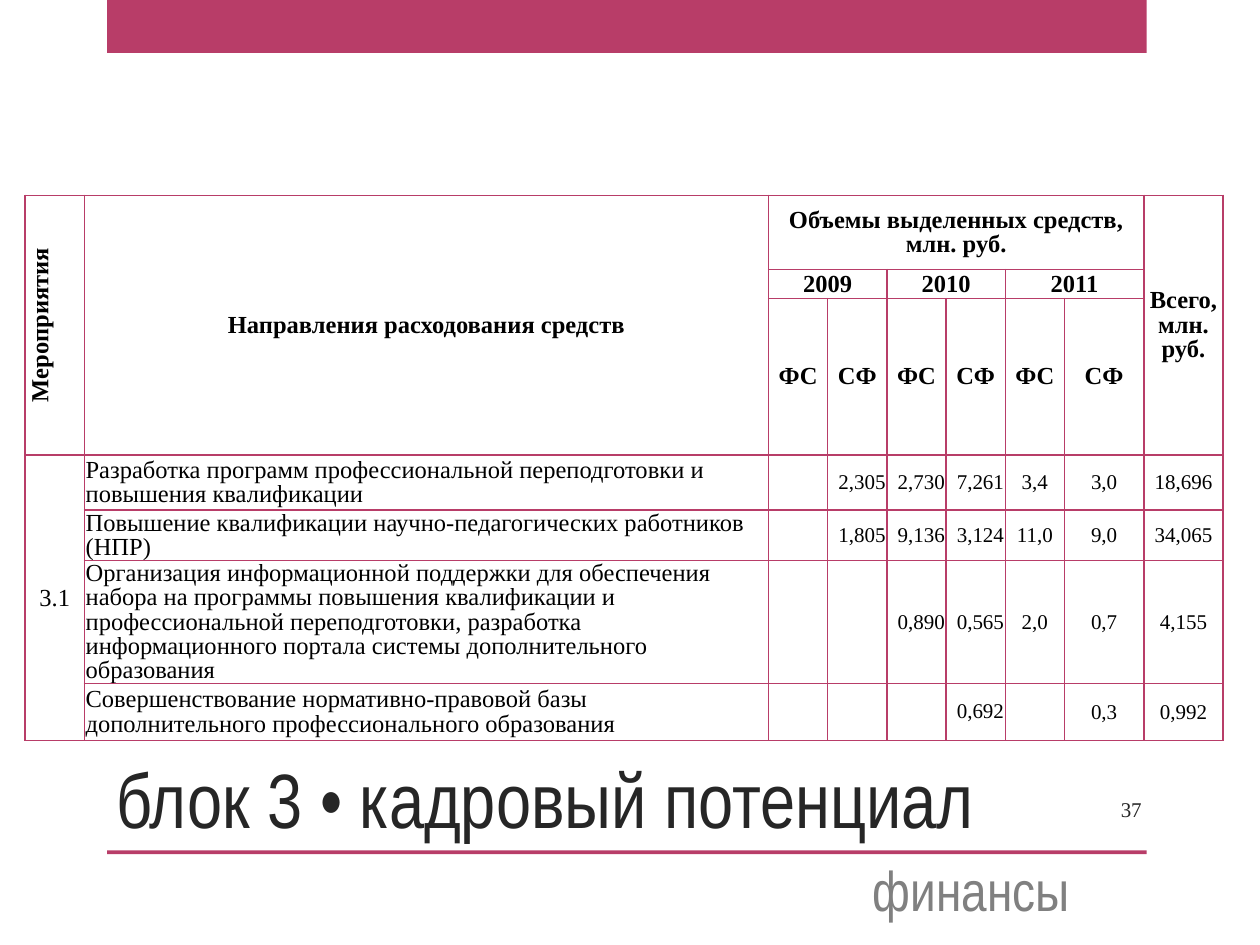
"""Build the slide with the funding table of block 3."""
from lxml.etree import SubElement
from pptx import Presentation
from pptx.dml.color import RGBColor
from pptx.enum.shapes import MSO_SHAPE
from pptx.enum.text import MSO_ANCHOR, PP_ALIGN
from pptx.oxml.ns import qn
from pptx.util import Inches, Pt

ROSE = "B83D68"
SERIF, NARROW = "Times New Roman", "Arial Narrow"
LEFT, MID, RIGHT = PP_ALIGN.LEFT, PP_ALIGN.CENTER, PP_ALIGN.RIGHT


def tint(color, value):
    color.rgb = RGBColor.from_string(value)


def write(frame, text, size=14, face=SERIF, color="000000", bold=False,
          align=LEFT, space=None):
    frame.word_wrap = True
    for i, line in enumerate(text.split("\n")):
        para = frame.paragraphs[0] if i == 0 else frame.add_paragraph()
        para.alignment = align
        para.line_spacing = space
        para.font.size = Pt(size)
        if line:
            run = para.add_run()
            run.text = line
            run.font.size = Pt(size)
            run.font.name = face
            run.font.bold = bold
            tint(run.font.color, color)


deck = Presentation()
deck.slide_width, deck.slide_height = Inches(10), Inches(7.5)
slide = deck.slides.add_slide(deck.slide_layouts[6])

for top, height in ((0, 0.42), (6.75, 0.03)):
    bar = slide.shapes.add_shape(MSO_SHAPE.RECTANGLE, Inches(0.85), Inches(top),
                                 Inches(8.25), Inches(height))
    bar.shadow.inherit = False
    bar.fill.solid()
    tint(bar.fill.fore_color, ROSE)
    bar.line.fill.background()

widths = [0.47, 5.43] + [0.47] * 5 + [0.63] * 2
heights = [0.59, 0.23, 1.24, 0.44, 0.4, 0.97, 0.45]
grid = slide.shapes.add_table(len(heights), len(widths), Inches(0.2), Inches(1.55),
                              Inches(sum(widths)), Inches(sum(heights))).table
grid.first_row = grid.horz_banding = False
for col, width in zip(grid.columns, widths):
    col.width = Inches(width)
for row, height in zip(grid.rows, heights):
    row.height = Inches(height)

heads = [
    (0, 0, 3, 1, "Мероприятия"),
    (0, 1, 3, 1, "Направления расходования средств"),
    (0, 2, 1, 6, "Объемы выделенных средств,\nмлн. руб."),
    (0, 8, 3, 1, "Всего, млн. руб."),
    (1, 2, 1, 2, "2009"),
    (1, 4, 1, 2, "2010"),
    (1, 6, 1, 2, "2011"),
    (3, 0, 4, 1, "3.1"),
]
lines = [
    ("Разработка программ профессиональной переподготовки и повышения квалификации",
     "", "2,305", "2,730", "7,261", "3,4", "3,0", "18,696"),
    ("Повышение квалификации научно-педагогических работников (НПР)",
     "", "1,805", "9,136", "3,124", "11,0", "9,0", "34,065"),
    ("Организация информационной поддержки для обеспечения набора на программы "
     "повышения квалификации и профессиональной переподготовки, разработка "
     "информационного портала системы дополнительного образования",
     "", "", "0,890", "0,565", "2,0", "0,7", "4,155"),
    ("Совершенствование нормативно-правовой базы дополнительного "
     "профессионального образования",
     "", "", "", "0,692", "", "0,3", "0,992"),
]

for cell in grid.iter_cells():
    cell.vertical_anchor = MSO_ANCHOR.MIDDLE
    cell.margin_left = cell.margin_right = cell.margin_top = Inches(0.01)
    cell.margin_bottom = 0
    props = cell._tc.get_or_add_tcPr()
    for side in ("a:lnL", "a:lnR", "a:lnT", "a:lnB"):
        edge = SubElement(props, qn(side), w=str(Pt(1)))
        SubElement(SubElement(edge, qn("a:solidFill")), qn("a:srgbClr"), val=ROSE)
    cell.fill.background()

for row, col, down, across, text in heads:
    cell = grid.cell(row, col)
    cell.merge(grid.cell(row + down - 1, col + across - 1))
    write(cell.text_frame, text, bold=row < 3, align=MID,
          space=0.9 if col else None)
grid.cell(0, 0)._tc.get_or_add_tcPr().set("vert", "vert270")

for col in range(2, 8):
    write(grid.cell(2, col).text_frame, ("ФС", "СФ")[col % 2], bold=True,
          align=MID, space=0.9)

for row, line in enumerate(lines, 3):
    for col, text in enumerate(line, 1):
        cell = grid.cell(row, col)
        if col > 5:
            cell.margin_left = cell.margin_right = cell.margin_top = 0
        write(cell.text_frame, text, size=14 if col == 1 else 12,
              align=LEFT if col == 1 else RIGHT if col < 6 else MID,
              space=0.9 if col < 6 else None)

notes = [
    ((8.33, 6.22, 0.83, 0.4), MSO_ANCHOR.MIDDLE, "37",
     dict(size=12, color="262626", align=RIGHT)),
    ((0.83, 5.88, 8.26, 0.87), MSO_ANCHOR.BOTTOM, "блок 3 • кадровый потенциал",
     dict(size=44, face=NARROW, color="262626")),
    ((6.83, 6.81, 2.17, 0.49), MSO_ANCHOR.MIDDLE, "финансы",
     dict(size=32, face=NARROW, color="808080")),
]
for place, anchor, text, style in notes:
    frame = slide.shapes.add_textbox(*map(Inches, place)).text_frame
    frame.vertical_anchor = anchor
    write(frame, text, **style)

deck.save("out.pptx")
